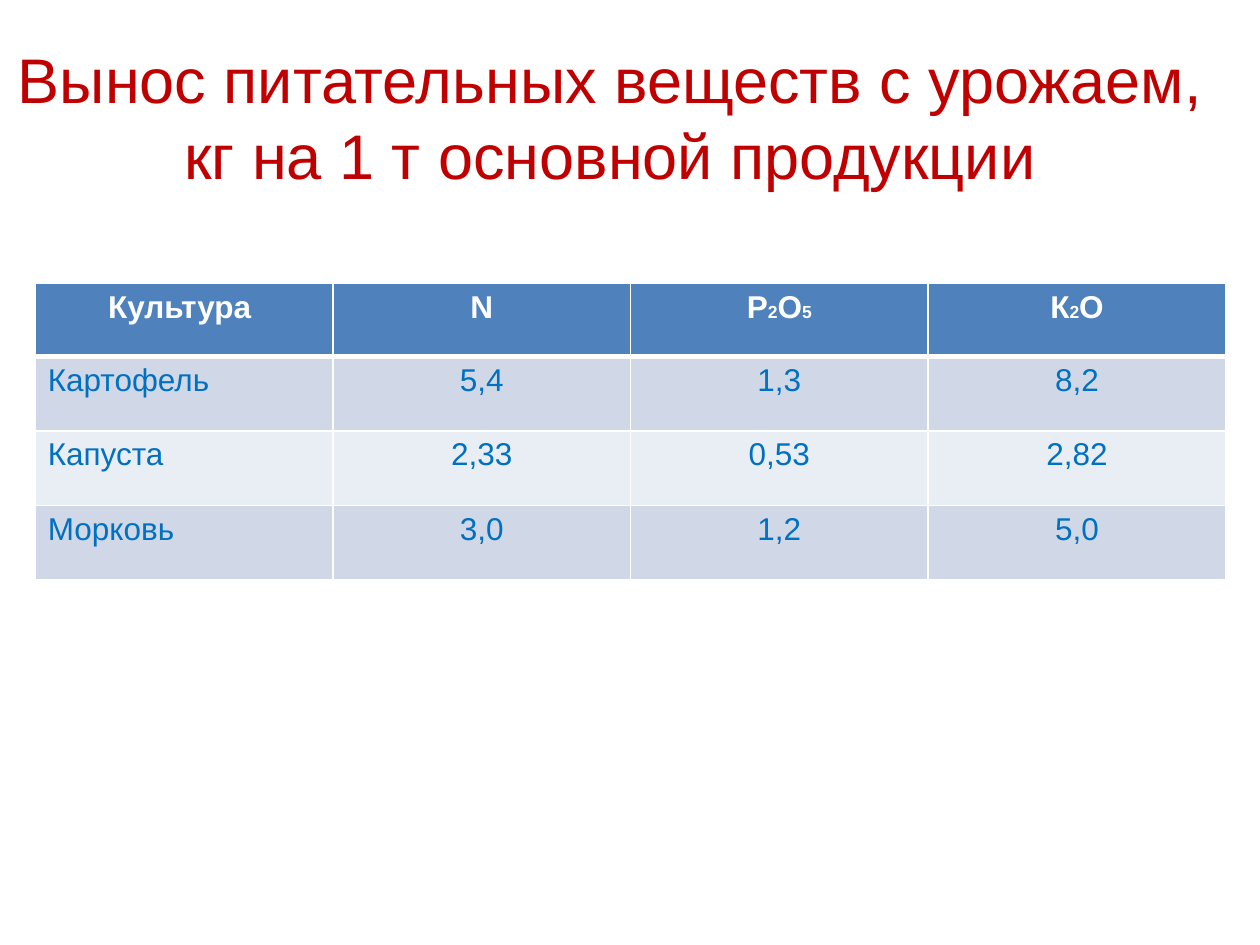
from lxml import etree
from pptx import Presentation
from pptx.dml.color import RGBColor
from pptx.enum import text
from pptx.oxml import ns
from pptx.util import Cm, Pt

TITLE = "Вынос питательных веществ с урожаем, кг на 1 т основной продукции"
HEADER = ["Культура ", "N", "Р2О5", "К2О"]
CROPS = [
    ("Картофель", "5,4", "1,3", "8,2"),
    ("Капуста", "2,33", "0,53", "2,82"),
    ("Морковь", "3,0", "1,2", "5,0"),
]
THEME = {
    "font": "Arial",
    "title": "C00000",
    "header": "FFFFFF",
    "body": "0070C0",
    "header_fill": "4F81BD",
    "bands": ("D0D8E8", "E9EDF4"),
    "border": "FFFFFF",
    "title_size": 36,
    "table_size": 18,
    "index_size": 10,
}
COLUMN_WIDTH, HEADER_HEIGHT, ROW_HEIGHT = Cm(6), Cm(1.47), Cm(1.5)


def write(frame, pieces, color, align=text.PP_ALIGN.CENTER, bold=False):
    """Fill the first paragraph with (wording, size) pieces."""
    paragraph = frame.paragraphs[0]
    paragraph.alignment = align
    for wording, size in pieces:
        run = paragraph.add_run()
        run.text = wording
        run.font.name = THEME["font"]
        run.font.size = Pt(size)
        run.font.bold = bold
        run.font.color.rgb = RGBColor.from_string(color)


def formula(wording):
    """Split a chemical formula so that its digits are small."""
    return [(mark, THEME["index_size" if mark.isdigit() else "table_size"])
            for mark in wording]


def set_borders(cell, **widths):
    properties = cell._tc.get_or_add_tcPr()
    for position, side in enumerate("LRTB"):
        line = etree.Element(ns.qn(f"a:ln{side}"), w=str(Pt(widths.get(side, 1))))
        fill = etree.SubElement(line, ns.qn("a:solidFill"))
        etree.SubElement(fill, ns.qn("a:srgbClr"), val=THEME["border"])
        properties.insert(position, line)


def fill_cell(cell, color):
    cell.fill.solid()
    cell.fill.fore_color.rgb = RGBColor.from_string(color)


def add_title(slide):
    title = slide.shapes.title
    title.left, title.top, title.width, title.height = Cm(-0.3), Cm(0.76), Cm(25.2), Cm(3.18)
    title.text_frame.vertical_anchor = text.MSO_ANCHOR.MIDDLE
    write(title.text_frame, [(TITLE, THEME["title_size"])], THEME["title"])


def add_crop_table(slide):
    table = slide.shapes.add_table(
        len(CROPS) + 1, len(HEADER), Cm(0.71), Cm(5.72),
        COLUMN_WIDTH * len(HEADER), HEADER_HEIGHT + ROW_HEIGHT * len(CROPS)).table
    for column in table.columns:
        column.width = COLUMN_WIDTH
    for index, row in enumerate(table.rows):
        row.height = ROW_HEIGHT if index else HEADER_HEIGHT

    for column, heading in enumerate(HEADER):
        cell = table.cell(0, column)
        pieces = formula(heading) if column else [(heading, THEME["table_size"])]
        write(cell.text_frame, pieces, THEME["header"], bold=True)
        fill_cell(cell, THEME["header_fill"])
        set_borders(cell, B=3)

    for index, crop in enumerate(CROPS):
        for column, value in enumerate(crop):
            cell = table.cell(index + 1, column)
            align = text.PP_ALIGN.CENTER if column else text.PP_ALIGN.LEFT
            write(cell.text_frame, [(value, THEME["table_size"])], THEME["body"], align)
            fill_cell(cell, THEME["bands"][index % 2])
            set_borders(cell, T=1 if index else 3)


def main():
    deck = Presentation()
    deck.slide_width, deck.slide_height = Cm(25.4), Cm(19.05)
    slide = deck.slides.add_slide(deck.slide_layouts[5])
    add_title(slide)
    add_crop_table(slide)
    deck.save("out.pptx")


if __name__ == "__main__":
    main()
